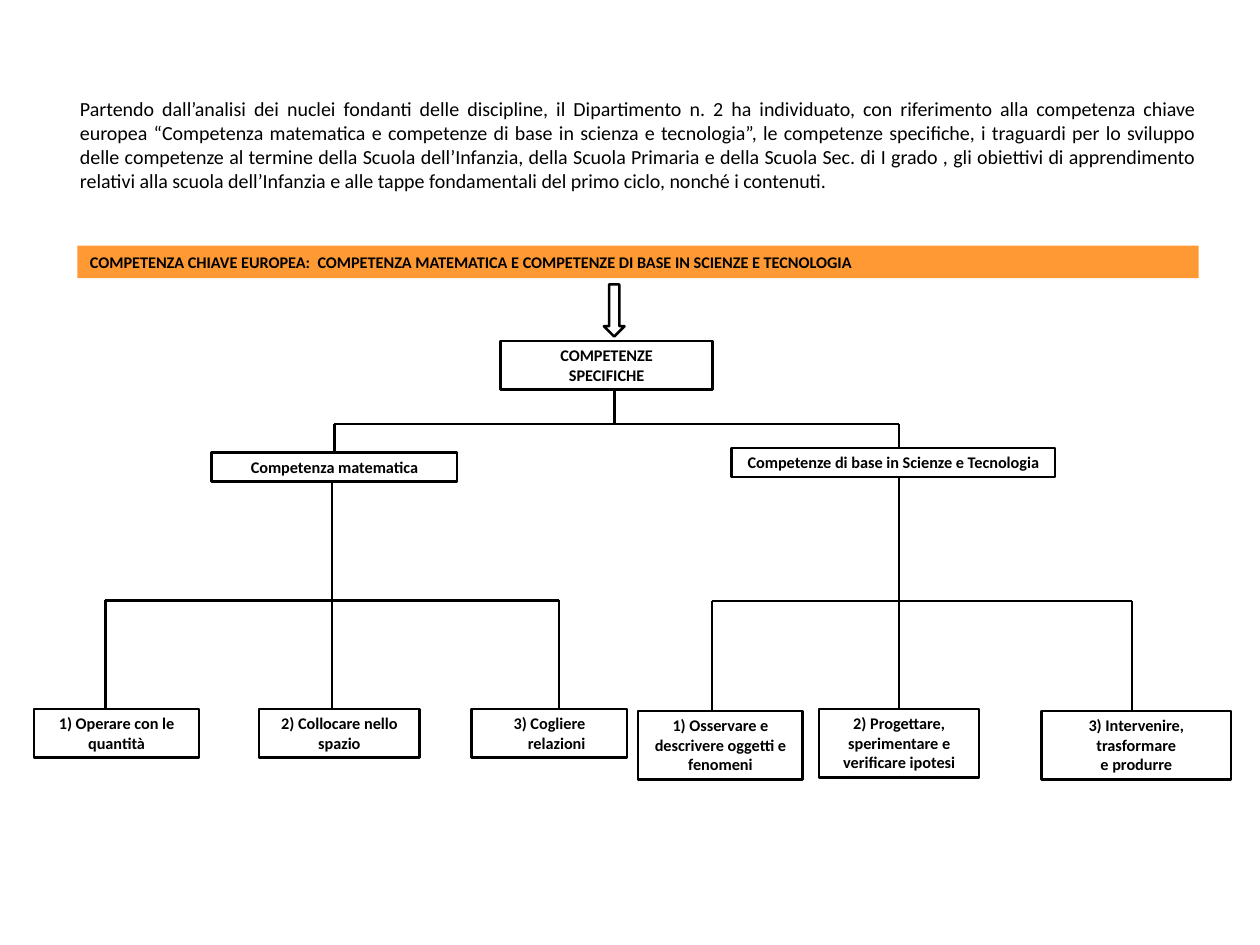
from dataclasses import dataclass
from typing import Optional

from pptx import Presentation
from pptx.dml.color import RGBColor
from pptx.enum.shapes import MSO_CONNECTOR, MSO_SHAPE
from pptx.enum.text import MSO_ANCHOR, PP_ALIGN
from pptx.oxml.ns import qn
from pptx.util import Inches, Pt
from lxml.etree import SubElement

BLACK = RGBColor(0x00, 0x00, 0x00)
ORANGE = RGBColor(0xFF, 0x99, 0x33)
FONT = "Calibri"

INTRO = (
    "Partendo dall’analisi dei nuclei fondanti delle discipline, il Dipartimento n. 2 "
    "ha individuato, con riferimento alla competenza chiave europea “Competenza matematica "
    "e competenze di base in scienza e tecnologia”, le competenze specifiche, i traguardi "
    "per lo sviluppo delle competenze al termine della Scuola dell’Infanzia, della Scuola "
    "Primaria e della Scuola Sec. di I grado , gli obiettivi di apprendimento relativi alla "
    "scuola dell’Infanzia e alle tappe fondamentali del primo ciclo, nonché i contenuti."
)
KEY_COMPETENCE = (
    "COMPETENZA CHIAVE EUROPEA:  COMPETENZA MATEMATICA E COMPETENZE DI BASE "
    "IN SCIENZE E TECNOLOGIA"
)


@dataclass
class Box:
    text: str
    left: float
    top: float
    width: float
    height: float
    last_indent: float = 0


@dataclass
class Leaf:
    box: Box
    line_x: float


@dataclass
class Branch:
    box: Box
    trunk_x: float
    bus_y: float
    leaves: list[Leaf]


ROOT = Box("COMPETENZE\nSPECIFICHE", 5.56, 3.79, 2.36, 0.54)
ROOT_X = 6.83
ROOT_BUS_Y = 4.71

BRANCHES = [
    Branch(Box("Competenza matematica", 2.35, 5.03, 2.73, 0.32), 3.69, 6.67, [
        Leaf(Box("1) Operare con le quantità", 0.38, 7.88, 1.83, 0.54), 1.17),
        Leaf(Box("2) Collocare nello spazio", 2.88, 7.88, 1.78, 0.54), 3.69),
        Leaf(Box("3) Cogliere\nrelazioni", 5.24, 7.88, 1.73, 0.54, 0.16), 6.21),
    ]),
    Branch(Box("Competenze di base in Scienze e Tecnologia", 8.13, 4.98, 3.59, 0.32),
           9.99, 6.68, [
        Leaf(Box("1) Osservare e descrivere oggetti e fenomeni", 7.09, 7.9, 1.83, 0.76), 7.91),
        Leaf(Box("2) Progettare, sperimentare e verificare ipotesi",
                 9.1, 7.88, 1.78, 0.76), 9.99),
        Leaf(Box("3) Intervenire,\ntrasformare\ne produrre", 11.57, 7.9, 2.11, 0.76), 12.58),
    ]),
]


def write(shape, text: str, size: int, bold: bool, align: PP_ALIGN,
          margin_x: float = 0.1, margin_y: float = 0.05) -> None:
    tf = shape.text_frame
    tf.word_wrap = True
    tf.vertical_anchor = MSO_ANCHOR.TOP
    tf.margin_left = tf.margin_right = Inches(margin_x)
    tf.margin_top = tf.margin_bottom = Inches(margin_y)
    tf.text = text
    for p in tf.paragraphs:
        p.alignment = align
        p.font.name = FONT
        p.font.size = Pt(size)
        p.font.bold = bold
        p.font.color.rgb = BLACK


def outline(shape) -> None:
    shape.shadow.inherit = False
    shape.fill.background()
    shape.line.color.rgb = BLACK
    shape.line.width = Pt(2)


def add_box(s, box: Box):
    sp = s.shapes.add_shape(MSO_SHAPE.RECTANGLE, Inches(box.left), Inches(box.top),
                            Inches(box.width), Inches(box.height))
    outline(sp)
    write(sp, box.text, 13, True, PP_ALIGN.CENTER)
    if box.last_indent:
        p_pr = sp.text_frame.paragraphs[-1]._p.get_or_add_pPr()
        p_pr.set("marL", str(Inches(box.last_indent)))
    return sp


def add_line(s, x1: float, y1: float, x2: float, y2: float,
             end_box: Optional[Box] = None, end_shape=None) -> None:
    line = s.shapes.add_connector(MSO_CONNECTOR.STRAIGHT, Inches(x1), Inches(y1),
                                  Inches(x2), Inches(y2))
    if end_box and abs(end_box.left + end_box.width / 2 - x2) < 0.01:
        line.end_connect(end_shape, 0)
    line.line.color.rgb = BLACK
    line.line.width = Pt(2)
    SubElement(line._element.spPr, qn("a:effectLst"))


def add_branch(s, branch: Branch) -> None:
    box = branch.box
    sp = add_box(s, box)
    drop_x = 3.715 if branch.trunk_x < ROOT_X else branch.trunk_x
    add_line(s, drop_x, ROOT_BUS_Y, drop_x, box.top, box, sp)
    add_line(s, branch.trunk_x, box.top + box.height, branch.trunk_x, branch.bus_y)
    add_line(s, branch.leaves[0].line_x, branch.bus_y, branch.leaves[-1].line_x, branch.bus_y)
    for leaf in branch.leaves:
        leaf_sp = add_box(s, leaf.box)
        add_line(s, leaf.line_x, branch.bus_y, leaf.line_x, leaf.box.top, leaf.box, leaf_sp)


def main() -> None:
    prs = Presentation()
    prs.slide_width, prs.slide_height = Inches(14), Inches(10.5)
    s = prs.slides.add_slide(prs.slide_layouts[6])

    intro = s.shapes.add_textbox(Inches(0.79), Inches(1.02), Inches(12.6), Inches(1.18))
    write(intro, INTRO, 16, False, PP_ALIGN.JUSTIFY)

    banner = s.shapes.add_shape(MSO_SHAPE.RECTANGLE, Inches(0.86), Inches(2.73),
                                Inches(12.46), Inches(0.36))
    banner.shadow.inherit = False
    banner.fill.solid()
    banner.fill.fore_color.rgb = ORANGE
    banner.line.fill.background()
    write(banner, KEY_COMPETENCE, 13, True, PP_ALIGN.LEFT, 0.14, 0.07)

    arrow = s.shapes.add_shape(MSO_SHAPE.DOWN_ARROW, Inches(6.71), Inches(3.16),
                               Inches(0.23), Inches(0.58))
    outline(arrow)

    add_box(s, ROOT)
    add_line(s, ROOT_X, ROOT.top + ROOT.height, ROOT_X, ROOT_BUS_Y)
    add_line(s, 3.71, ROOT_BUS_Y, 9.99, ROOT_BUS_Y)
    for branch in BRANCHES:
        add_branch(s, branch)

    prs.save("out.pptx")


if __name__ == "__main__":
    main()
